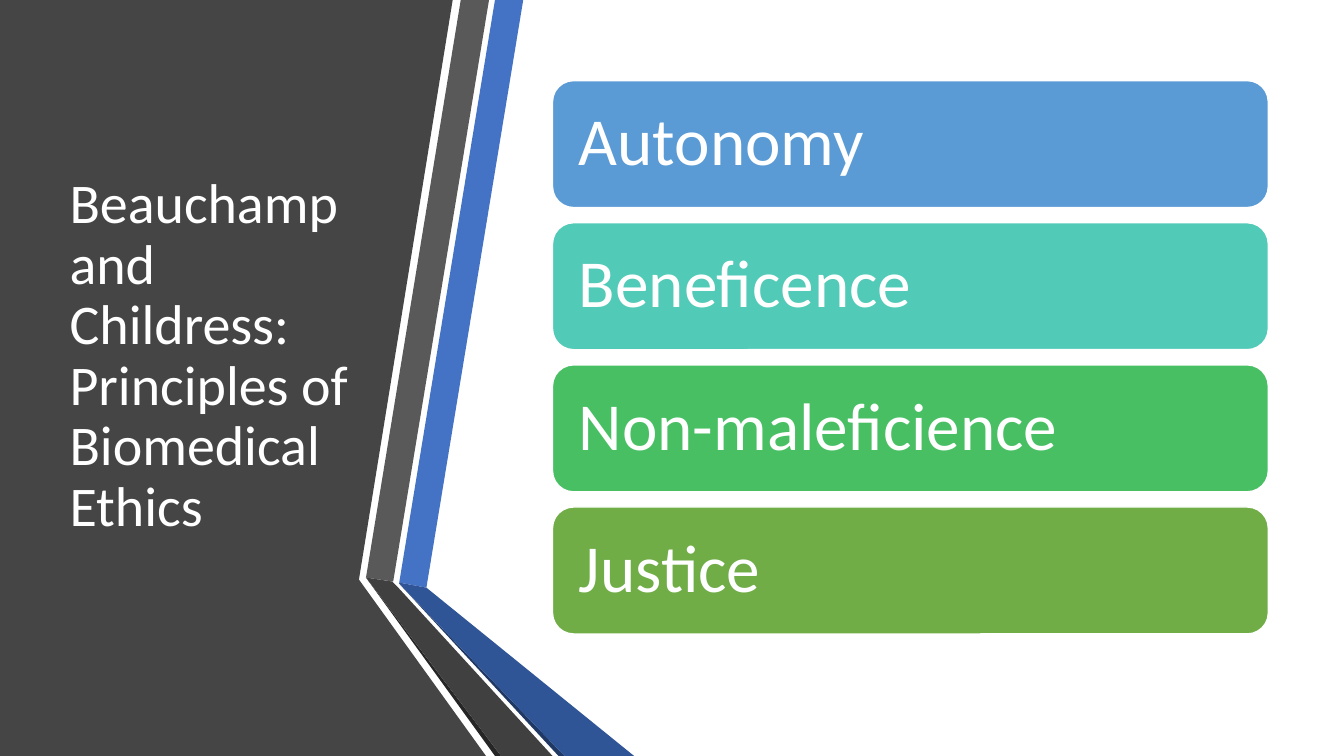
"""Build the slide on the four principles of biomedical ethics."""
from pptx import Presentation
from pptx.dml.color import RGBColor
from pptx.enum.text import MSO_ANCHOR, MSO_AUTO_SIZE, PP_ALIGN
from pptx.util import Inches, Pt

MIDDLE = MSO_ANCHOR.MIDDLE
LEFT = PP_ALIGN.LEFT
FIXED = MSO_AUTO_SIZE.NONE
ROUND = 5

WHITE = RGBColor(0xFF, 0xFF, 0xFF)
PANEL = RGBColor(0x45, 0x45, 0x45)
BLUE = RGBColor(0x44, 0x72, 0xC4)
NAVY = RGBColor(0x20, 0x38, 0x64)
DEEP = RGBColor(0x2F, 0x55, 0x97)
GRAY = RGBColor(0x59, 0x59, 0x59)
BLACK = RGBColor(0x26, 0x26, 0x26)
DARK = RGBColor(0x40, 0x40, 0x40)

TITLE = "Beauchamp and Childress: Principles of Biomedical Ethics"
CARDS = [
    ("Autonomy", RGBColor(0x5B, 0x9B, 0xD5)),
    ("Beneficence", RGBColor(0x52, 0xCA, 0xB8)),
    ("Non-maleficience", RGBColor(0x49, 0xBF, 0x64)),
    ("Justice", RGBColor(0x70, 0xAD, 0x47)),
]
BANDS = [
    (PANEL, [(0, 0), (4.49, 0), (3.56, 5.75), (4.82, 7.5), (0, 7.5)]),
    (BLUE, [(3.96, 5.78), (4.23, 5.83), (5.19, 0), (4.91, 0)]),
    (GRAY, [(4.85, 0), (4.57, 0), (3.63, 5.73), (3.9, 5.77)]),
    (BLACK, [(3.63, 5.73), (4.91, 7.5), (4.97, 7.5)]),
    (NAVY, [(3.96, 5.79), (5.54, 7.5), (5.6, 7.5)]),
    (DEEP, [(3.96, 5.79), (5.6, 7.5), (6.29, 7.5), (4.23, 5.83), (3.96, 5.78)]),
    (DARK, [(5.48, 7.5), (3.95, 5.83), (3.89, 5.77), (3.63, 5.73), (4.97, 7.5)]),
]
CARD_X, CARD_Y, CARD_W, CARD_H, STEP = 5.48, 0.8, 7.1, 1.26, 1.41


def paint(shape, color):
    shape.shadow.inherit = False
    shape.fill.solid()
    shape.fill.fore_color.rgb = color


def band(slide, color, points):
    dots = [(Inches(x), Inches(y)) for x, y in points]
    pen = slide.shapes.build_freeform(*dots[0])
    pen.add_line_segments(dots[1:], close=True)
    shape = pen.convert_to_shape()
    paint(shape, color)
    shape.line.fill.background()


def write(shape, text, size):
    frame = shape.text_frame
    frame.word_wrap = True
    frame.auto_size = FIXED
    frame.vertical_anchor = MIDDLE
    para = frame.paragraphs[0]
    para.alignment = LEFT
    para.line_spacing = 0.9
    run = para.add_run()
    run.text = text
    run.font.name = "Calibri"
    run.font.size = Pt(size)
    run.font.color.rgb = WHITE


def card(slide, row, text, color):
    shape = slide.shapes.add_shape(
        ROUND, Inches(CARD_X), Inches(CARD_Y + row * STEP),
        Inches(CARD_W), Inches(CARD_H))
    paint(shape, color)
    shape.line.color.rgb = WHITE
    shape.line.width = Pt(1)
    frame = shape.text_frame
    frame.margin_left = frame.margin_right = Inches(0.2)
    frame.margin_top = frame.margin_bottom = Inches(0.2)
    write(shape, text, 48)


def main():
    deck = Presentation()
    deck.slide_width, deck.slide_height = Inches(13.33), Inches(7.5)
    slide = deck.slides.add_slide(deck.slide_layouts[5])
    for color, points in BANDS:
        band(slide, color, points)
    title = slide.shapes.title
    title.left, title.top = Inches(0.59), Inches(0.75)
    title.width, title.height = Inches(3.04), Inches(5.58)
    write(title, TITLE, 40)
    slide.shapes.element.append(title.element)
    for row, (text, color) in enumerate(CARDS):
        card(slide, row, text, color)
    deck.save("out.pptx")


if __name__ == "__main__":
    main()
